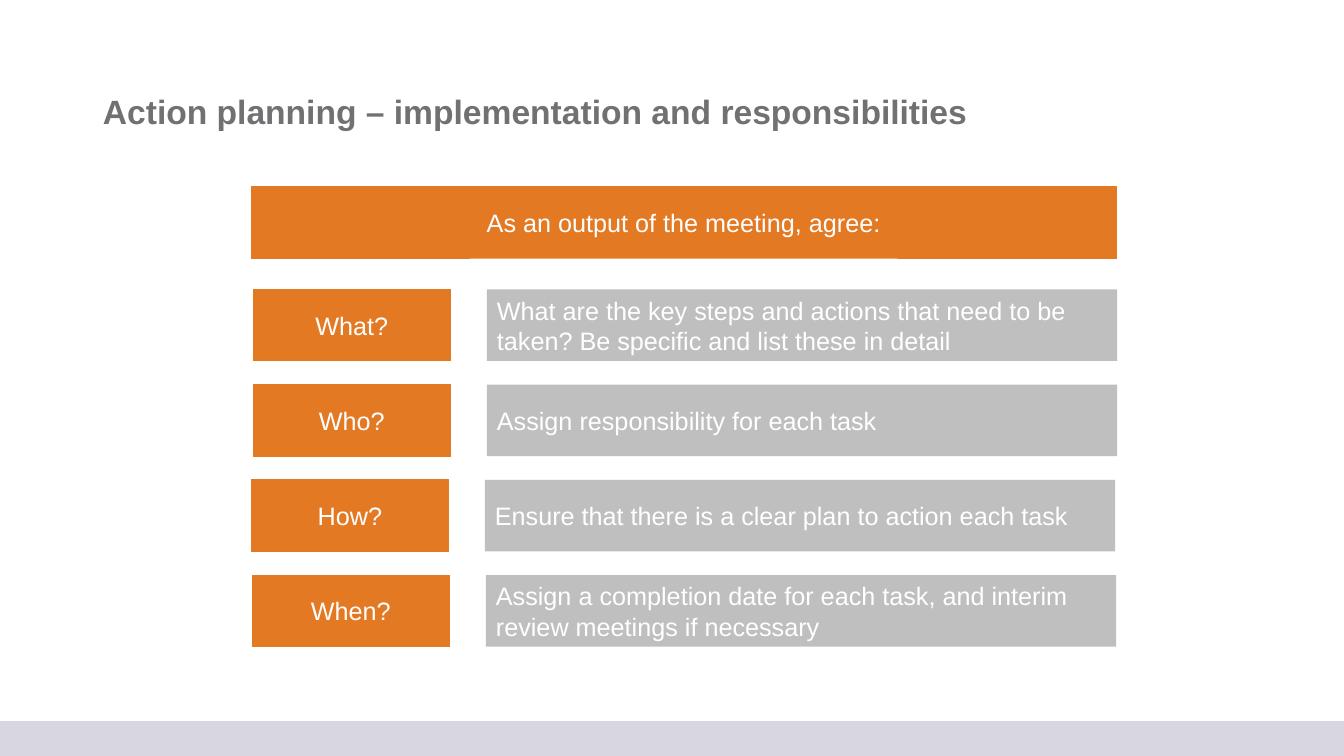
from pptx import Presentation
from pptx.dml.color import RGBColor
from pptx.enum.shapes import MSO_SHAPE
from pptx.enum.text import MSO_ANCHOR, PP_ALIGN
from pptx.util import Inches, Pt

RECTANGLE = MSO_SHAPE.RECTANGLE
MIDDLE = MSO_ANCHOR.MIDDLE
LEFT, CENTER = PP_ALIGN.LEFT, PP_ALIGN.CENTER
ORANGE = RGBColor(0xE4, 0x79, 0x23)
GRAY = RGBColor(0xBF, 0xBF, 0xBF)
LAVENDER = RGBColor(0xD8, 0xD7, 0xE1)
TITLE_GRAY = RGBColor(0x70, 0x71, 0x73)
WHITE = RGBColor(0xFF, 0xFF, 0xFF)
BOX_HEIGHT = 0.71


def add_box(left, top, width, height, fill, line_width=0):
    shape = slide.shapes.add_shape(
        RECTANGLE, Inches(left), Inches(top), Inches(width), Inches(height))
    shape.shadow.inherit = False
    shape.fill.solid()
    shape.fill.fore_color.rgb = fill
    if line_width:
        shape.line.color.rgb = fill
        shape.line.width = Pt(line_width)
    else:
        shape.line.fill.background()
    return shape


def write_text(shape, text, size, color, alignment, bold=False):
    frame = shape.text_frame
    frame.word_wrap = True
    frame.vertical_anchor = MIDDLE
    paragraph = frame.paragraphs[0]
    paragraph.text = text
    paragraph.alignment = alignment
    paragraph.font.name = "Arial"
    paragraph.font.size = Pt(size)
    paragraph.font.bold = bold
    paragraph.font.color.rgb = color
    return paragraph


presentation = Presentation()
presentation.slide_width = Inches(13.33)
presentation.slide_height = Inches(7.5)
slide = presentation.slides.add_slide(presentation.slide_layouts[5])

add_box(0, 7.16, 13.33, 0.34, LAVENDER, 1)

title = slide.shapes.title
title.left, title.top = Inches(0.92), Inches(0.4)
title.width, title.height = Inches(11.5), Inches(1.45)
title_paragraph = write_text(
    title, "Action planning – implementation and responsibilities",
    24, TITLE_GRAY, LEFT, True)
title_paragraph.line_spacing = 0.9

header = add_box(2.49, 1.85, 8.58, BOX_HEIGHT, ORANGE, 0.5)
write_text(header, "As an output of the meeting, agree:", 18, WHITE, CENTER)

questions = [
    (2.51, "What?", "What are the key steps and actions that need to be taken? "
     "Be specific and list these in detail"),
    (2.51, "Who?", "Assign responsibility for each task"),
    (2.49, "How?", "Ensure that there is a clear plan to action each task"),
    (2.5, "When?", "Assign a completion date for each task, "
     "and interim review meetings if necessary"),
]
for row, (left, question, answer) in enumerate(questions):
    top = 2.87 + row * 0.945
    question_box = add_box(left, top, 1.96, BOX_HEIGHT, ORANGE, 0.5)
    write_text(question_box, question, 18, WHITE, CENTER)
    answer_box = add_box(left + 2.32, top, 6.25, BOX_HEIGHT, GRAY)
    write_text(answer_box, answer, 18, WHITE, LEFT)

presentation.save("out.pptx")
